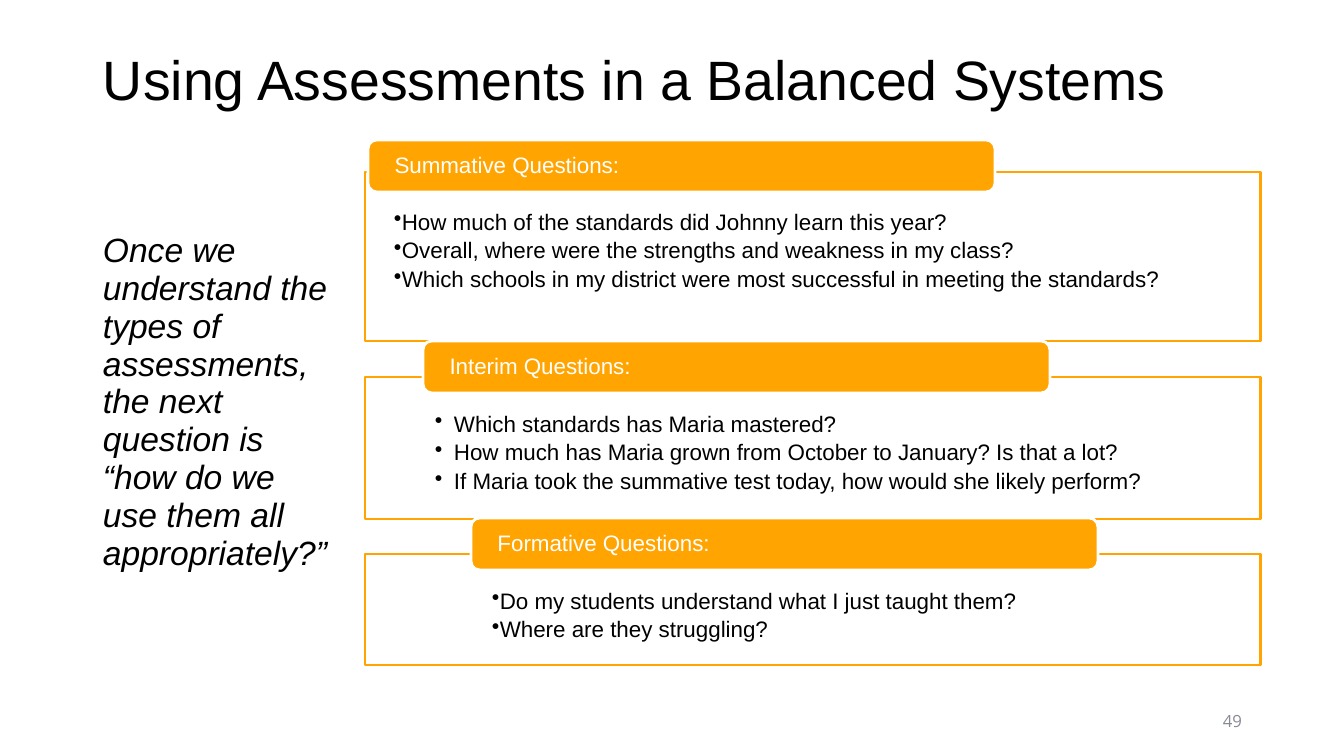
from dataclasses import dataclass

from lxml import etree
from pptx import Presentation
from pptx import util as u
from pptx.dml import color
from pptx.enum import shapes, text
from pptx.oxml import ns


@dataclass(frozen=True)
class Theme:
    face: str = "Arial"
    foot: str = "Open Sans"
    ink: str = "000000"
    gold: str = "FFA400"
    white: str = "FFFFFF"
    gray: str = "888B94"
    head: float = 39.6
    quote: float = 24
    body: float = 16
    small: float = 12
    rule: float = 2


def px(n):
    return u.Emu(round(n * 914400 / 100.8))


def rgb(code):
    return color.RGBColor.from_string(code)


class Deck:
    def __init__(self, theme):
        self.theme = theme
        self.pres = Presentation()
        self.pres.slide_width, self.pres.slide_height = px(1344), px(756)
        self.slide = self.pres.slides.add_slide(self.pres.slide_layouts[6])

    def fit(self, shape, inset, anchor):
        frame = shape.text_frame
        frame.word_wrap = True
        frame.vertical_anchor = anchor
        left, top, right, low = map(px, inset)
        frame.margin_left, frame.margin_top = left, top
        frame.margin_right, frame.margin_bottom = right, low
        return frame

    def add(self, para, words, size, tint, face=None, slant=False, lead=0.9):
        para.line_spacing = lead
        run = para.add_run()
        run.text = words
        font = run.font
        font.name = face or self.theme.face
        font.size = u.Pt(size)
        font.italic = slant
        font.color.rgb = rgb(tint)

    def label(self, box, words, size, tint, inset=(10, 5, 10, 5),
              anchor=text.MSO_ANCHOR.TOP, align=text.PP_ALIGN.LEFT, **style):
        shape = self.slide.shapes.add_textbox(*map(px, box))
        para = self.fit(shape, inset, anchor).paragraphs[0]
        para.alignment = align
        self.add(para, words, size, tint, **style)

    def block(self, kind, box, fill, line):
        shape = self.slide.shapes.add_shape(kind, *map(px, box))
        shape.shadow.inherit = False
        shape.fill.solid()
        shape.fill.fore_color.rgb = rgb(fill)
        shape.line.color.rgb = rgb(line)
        shape.line.width = u.Pt(self.theme.rule)
        return shape

    def bullet(self, para, left, hang):
        props = para._p.get_or_add_pPr()
        props.set("marL", str(px(left)))
        props.set("indent", str(px(hang)))
        tint = etree.SubElement(props, ns.qn("a:buClr"))
        etree.SubElement(tint, ns.qn("a:srgbClr"), val=self.theme.ink)
        etree.SubElement(props, ns.qn("a:buChar"), char="•")

    def panel(self, top, high, inset, indent, lines):
        look = self.theme
        shape = self.block(shapes.MSO_SHAPE.RECTANGLE, (365, top, 896, high),
                           look.white, look.gold)
        tint = shape._element.spPr.find(ns.qn("a:solidFill"))[0]
        etree.SubElement(tint, ns.qn("a:alpha"), val="90000")
        frame = self.fit(shape, inset, text.MSO_ANCHOR.TOP)
        for spot, words in enumerate(lines):
            para = frame.add_paragraph() if spot else frame.paragraphs[0]
            self.bullet(para, *indent)
            para.alignment = text.PP_ALIGN.LEFT
            para.space_after = u.Pt(3.2)
            self.add(para, words, look.body, look.ink)

    def tab(self, left, top, words):
        look = self.theme
        shape = self.block(shapes.MSO_SHAPE.ROUNDED_RECTANGLE,
                           (left, top, 627, 52), look.gold, look.white)
        frame = self.fit(shape, (24, 0, 24, 0), text.MSO_ANCHOR.MIDDLE)
        para = frame.paragraphs[0]
        para.alignment = text.PP_ALIGN.LEFT
        self.add(para, words, look.body, look.white)


GROUPS = [
    ("Summative Questions:", (368, 140), (172, 169), (10, 39, 10, 10), (19, 0), [
        "How much of the standards did Johnny learn this year?",
        "Overall, where were the strengths and weakness in my class?",
        "Which schools in my district were most successful in meeting the standards?",
    ]),
    ("Interim Questions:", (423, 341), (377, 142), (70, 36, 70, 12), (19, -19), [
        "Which standards has Maria mastered?",
        "How much has Maria grown from October to January? Is that a lot?",
        "If Maria took the summative test today, how would she likely perform?",
    ]),
    ("Formative Questions:", (471, 518), (554, 111), (70, 36, 70, 12), (57, 0), [
        "Do my students understand what I just taught them?",
        "Where are they struggling?",
    ]),
]


def main():
    look = Theme()
    deck = Deck(look)
    deck.label((93, 50, 1159, 111), "Using Assessments in a Balanced Systems",
               look.head, look.ink, inset=(10, 3, 10, 5))
    deck.label((93, 227, 245, 420),
               "Once we understand the types of assessments, the next question is "
               "“how do we use them all appropriately?”",
               look.quote, look.ink, slant=True, lead=0.94)
    deck.label((950, 701, 302, 40), "49", look.small, look.gray,
               anchor=text.MSO_ANCHOR.MIDDLE, align=text.PP_ALIGN.RIGHT,
               face=look.foot, lead=1.0)
    for name, spot, span, inset, indent, lines in GROUPS:
        deck.panel(*span, inset, indent, lines)
        deck.tab(*spot, name)
    deck.pres.save("out.pptx")


if __name__ == "__main__":
    main()
